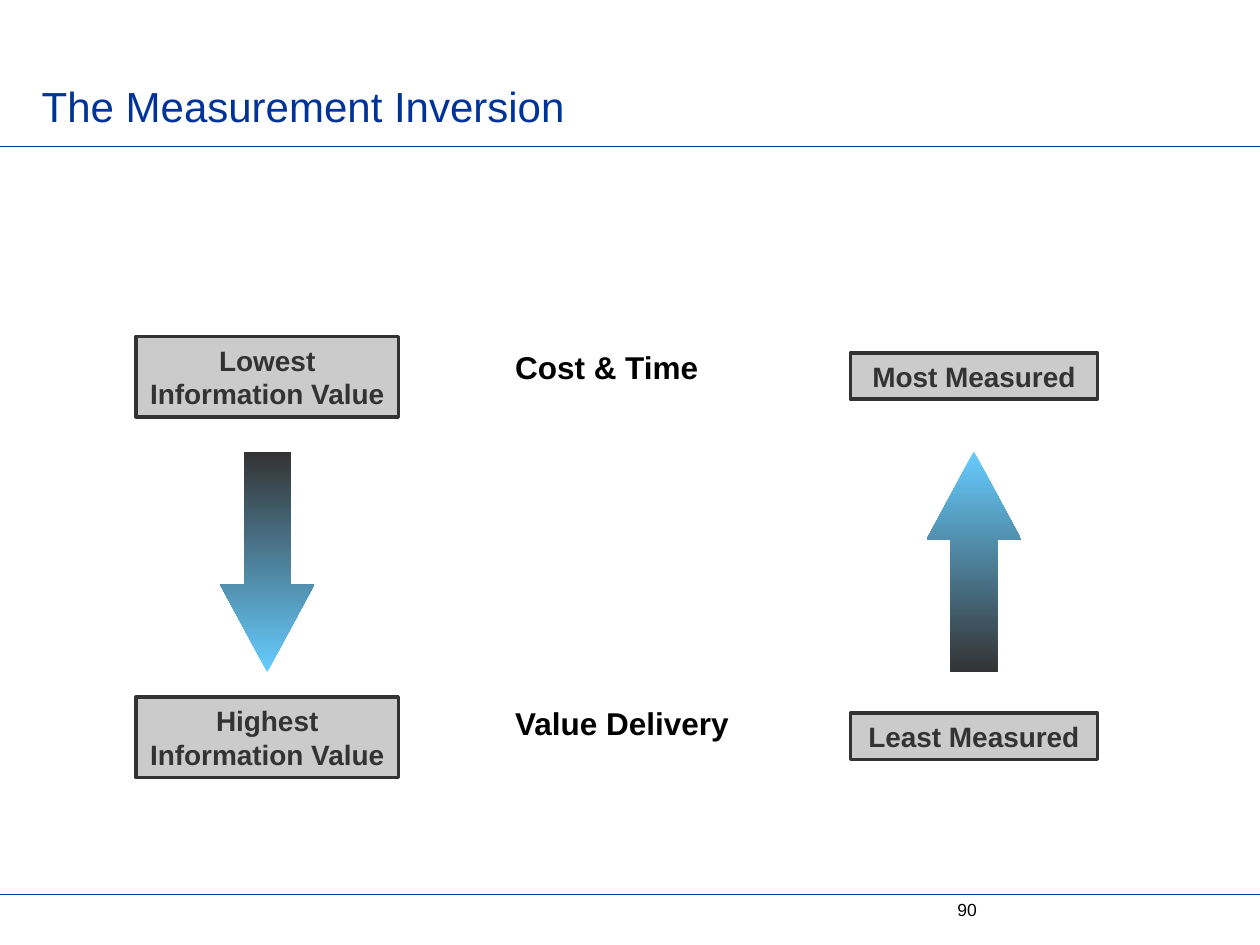
from dataclasses import dataclass

from lxml.etree import SubElement
from pptx import Presentation
from pptx.dml.color import RGBColor
from pptx.enum.shapes import MSO_CONNECTOR, MSO_SHAPE
from pptx.enum.text import MSO_ANCHOR, PP_ALIGN
from pptx.oxml.ns import qn
from pptx.util import Pt


@dataclass(frozen=True)
class Theme:
    font: str = "Arial"
    navy: str = "003399"
    dark: str = "333333"
    sky: str = "66CCFF"
    black: str = "000000"
    title: float = 24
    label: float = 18
    box: float = 16
    page: float = 10


@dataclass(frozen=True)
class Item:
    text: str
    left: float
    top: float
    width: float
    height: float


THEME = Theme()
WIDTH, HEIGHT = 720, 540
RULES = (83.5, 511.2)

BOXES = (
    Item("Lowest\nInformation Value", 77.8, 192.2, 149.8, 46.1),
    Item("Highest Information Value", 77.8, 398.2, 149.8, 46.1),
    Item("Most Measured", 486, 201.6, 141.1, 26.6),
    Item("Least Measured", 486, 407.5, 141.1, 26.6),
)
LABELS = (
    Item("Cost & Time", 287.3, 195.1, 136.8, 28.8),
    Item("Value Delivery", 287.3, 398.9, 136.8, 28.8),
)
PAGE = Item("90", 540, 509.8, 167.8, 19.4)

# Arrows: centre of each column and rotation
ARROWS = ((152.7, 180), (556.5, 0))
ARROW_TOP, ARROW_W, ARROW_H = 258, 54, 126


def write(shape, text: str, size: float, color: str, bold: bool = False,
          align=PP_ALIGN.LEFT, anchor=MSO_ANCHOR.TOP) -> None:
    frame = shape.text_frame
    frame.text = text
    frame.word_wrap = True
    frame.vertical_anchor = anchor
    for par in frame.paragraphs:
        par.alignment = align
        par.font.name = THEME.font
        par.font.size = Pt(size)
        par.font.bold = bold
        par.font.color.rgb = RGBColor.from_string(color)


def place(item: Item) -> tuple:
    return Pt(item.left), Pt(item.top), Pt(item.width), Pt(item.height)


def add_rule(slide, top: float) -> None:
    rule = slide.shapes.add_connector(
        MSO_CONNECTOR.STRAIGHT, 0, Pt(top), Pt(WIDTH), Pt(top))
    rule.line.width = Pt(0.5)
    rule.line.color.rgb = RGBColor.from_string(THEME.navy)
    SubElement(rule._element.spPr, qn("a:effectLst"))


def add_box(slide, item: Item) -> None:
    box = slide.shapes.add_shape(MSO_SHAPE.RECTANGLE, *place(item))
    box.shadow.inherit = False
    box.fill.solid()
    box.fill.fore_color.rgb = RGBColor.from_string(THEME.dark)
    # Fill at 25% opacity
    tint = box._element.spPr.find(qn("a:solidFill"))[0]
    SubElement(tint, qn("a:alpha"), val="25000")
    box.line.width = Pt(2)
    box.line.color.rgb = RGBColor.from_string(THEME.dark)
    write(box, item.text, THEME.box, THEME.dark, True,
          PP_ALIGN.CENTER, MSO_ANCHOR.MIDDLE)


def add_arrow(slide, center: float, turn: float) -> None:
    arrow = slide.shapes.add_shape(
        MSO_SHAPE.UP_ARROW, Pt(center - ARROW_W / 2), Pt(ARROW_TOP),
        Pt(ARROW_W), Pt(ARROW_H))
    arrow.rotation = turn
    arrow.adjustments[0] = 0.49
    arrow.adjustments[1] = 0.93
    arrow.shadow.inherit = False
    arrow.line.fill.background()
    arrow.fill.gradient()
    arrow.fill.gradient_angle = 270
    for stop, color in zip(arrow.fill.gradient_stops, (THEME.sky, THEME.dark)):
        stop.color.rgb = RGBColor.from_string(color)


def add_text(slide, item: Item, size: float, bold: bool, anchor) -> None:
    box = slide.shapes.add_textbox(*place(item))
    write(box, item.text, size, THEME.black, bold, anchor=anchor)


def main() -> None:
    deck = Presentation()
    deck.slide_width, deck.slide_height = Pt(WIDTH), Pt(HEIGHT)
    slide = deck.slides.add_slide(deck.slide_layouts[5])

    # Title and page furniture
    for top in RULES:
        add_rule(slide, top)
    title = slide.shapes.title
    title.left, title.top = Pt(16.6), Pt(10.8)
    title.width, title.height = Pt(596.2), Pt(67.7)
    write(title, "The Measurement Inversion", THEME.title, THEME.navy,
          anchor=MSO_ANCHOR.BOTTOM)
    add_text(slide, PAGE, THEME.page, False, MSO_ANCHOR.BOTTOM)

    # Scale ends, arrows and middle labels
    for item in BOXES:
        add_box(slide, item)
    for center, turn in ARROWS:
        add_arrow(slide, center, turn)
    for item in LABELS:
        add_text(slide, item, THEME.label, True, MSO_ANCHOR.TOP)

    deck.save("out.pptx")


if __name__ == "__main__":
    main()
